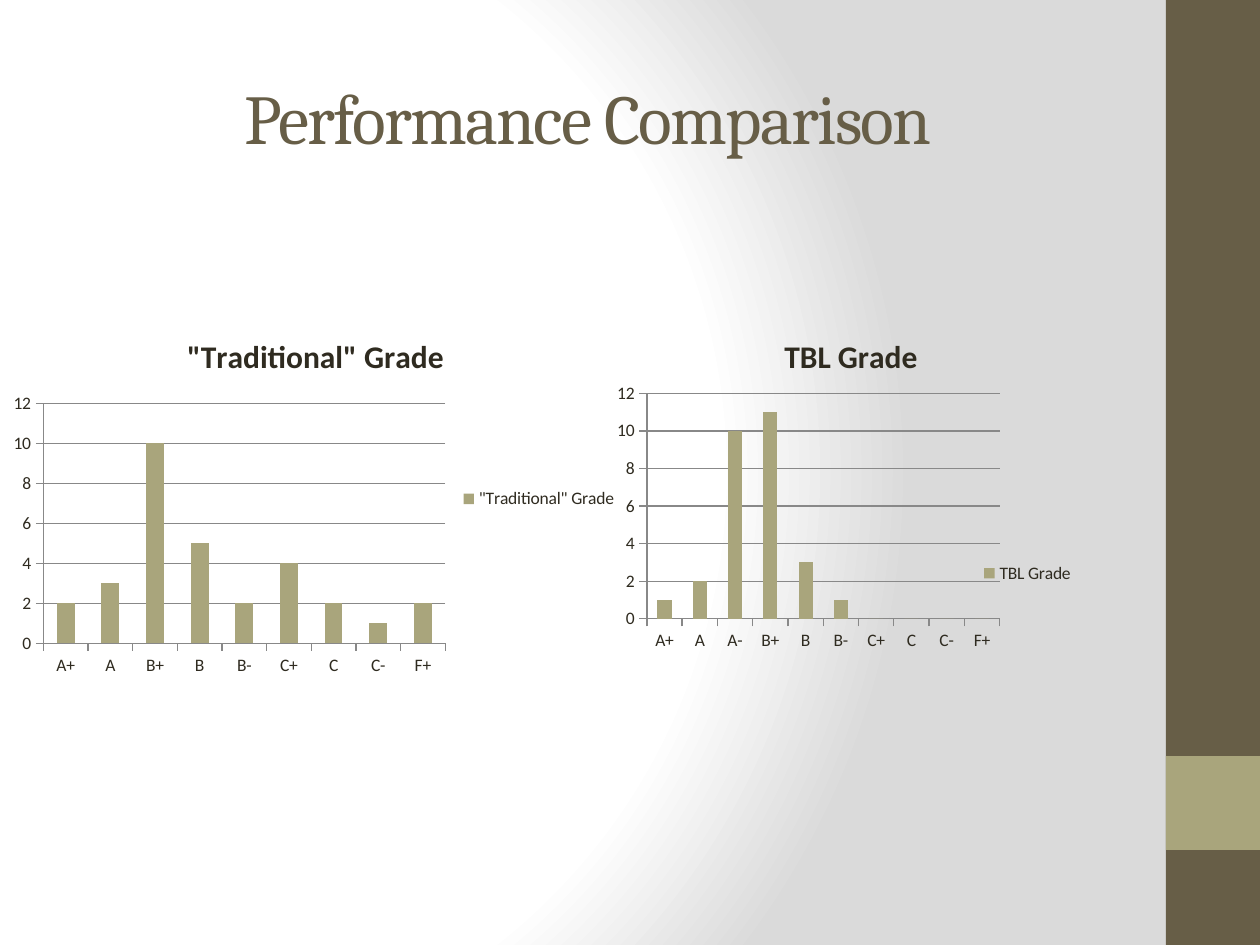
from dataclasses import dataclass
from typing import Any, Optional

from lxml import etree
from pptx import Presentation
from pptx import util as u
from pptx.chart.data import CategoryChartData
from pptx.dml.color import RGBColor
from pptx.enum import chart as charts, shapes, text
from pptx.oxml import parse_xml
from pptx.oxml.ns import nsdecls, qn

SCALE = 914400 / 126
OLIVE, SAGE, INK, GRID = "675E47", "A9A57C", "2F2B20", "888888"
GRADIENT_STOPS = ((0, "FFFFFF"), (75, "FFFFFF"), (100, "DADADA"))


@dataclass
class Box:
    left: int
    top: int
    width: int
    height: int

    def emu(self) -> list[int]:
        return [px(n) for n in (self.left, self.top, self.width, self.height)]


@dataclass
class GradeChart:
    name: str
    box: Box
    grades: list[str]
    counts: list[int]
    plot_layout: Optional[tuple[float, ...]] = None
    legend_layout: Optional[tuple[float, ...]] = None


BANDS = ((Box(1166, 0, 94, 945), OLIVE), (Box(1166, 756, 94, 94), SAGE))
GRADE_CHARTS = (
    GradeChart('"Traditional" Grade', Box(1, 315, 629, 368),
               ["A+", "A", "B+", "B", "B-", "C+", "C", "C-", "F+"],
               [2, 3, 10, 5, 2, 4, 2, 1, 2]),
    GradeChart("TBL Grade", Box(599, 315, 504, 336),
               ["A+", "A", "A-", "B+", "B", "B-", "C+", "C", "C-", "F+"],
               [1, 2, 10, 11, 3, 1, 0, 0, 0, 0],
               plot_layout=(0.095, 0.234, 0.7, 0.672),
               legend_layout=(0.75, 0.72, 0.2, 0.1)),
)


def px(length: int) -> int:
    return round(length * SCALE)


def color(value: str) -> RGBColor:
    return RGBColor.from_string(value)


def set_format(target: Any, **values: Any) -> None:
    for name, value in values.items():
        setattr(target, name, value)


def format_font(font: Any, fill: str, **values: Any) -> None:
    set_format(font, **values)
    font.color.rgb = color(fill)


def paint_background(slide: Any) -> None:
    slide.background.fill.solid()
    solid = slide.element.find(".//" + qn("p:bgPr")).find(qn("a:solidFill"))
    stops = "".join(f'<a:gs pos="{position * 1000}"><a:srgbClr val="{value}"/></a:gs>'
                    for position, value in GRADIENT_STOPS)
    gradient = parse_xml(
        f'<a:gradFill {nsdecls("a")} rotWithShape="1"><a:gsLst>{stops}</a:gsLst>'
        '<a:path path="circle"><a:fillToRect l="20000" t="50000" r="100000" b="50000"/>'
        '</a:path></a:gradFill>')
    solid.getparent().replace(solid, gradient)


def add_band(slide: Any, box: Box, fill: str) -> None:
    shape = slide.shapes.add_shape(shapes.MSO_SHAPE.RECTANGLE, *box.emu())
    shape.shadow.inherit = False
    shape.fill.solid()
    shape.fill.fore_color.rgb = color(fill)
    shape.line.fill.background()


def write_title(slide: Any, title: str, box: Box) -> None:
    shape = slide.shapes.title
    set_format(shape, **dict(zip(("left", "top", "width", "height"), box.emu())))
    frame = shape.text_frame
    set_format(frame, word_wrap=True, vertical_anchor=text.MSO_ANCHOR.MIDDLE)
    paragraph = frame.paragraphs[0]
    paragraph.alignment = text.PP_ALIGN.CENTER
    run = paragraph.add_run()
    run.text = title
    format_font(run.font, OLIVE, name="Cambria", size=u.Pt(40))
    run._r.get_or_add_rPr().set("spc", "-100")


def place_manually(parent: Any, layout: tuple[float, ...], before: str, inner: bool = False) -> None:
    """Give a plot area or legend a fixed place, as fractions of the chart."""
    for old in parent.findall(qn("c:layout")):
        parent.remove(old)
    element = parse_xml(f'<c:layout {nsdecls("c")}><c:manualLayout/></c:layout>')
    manual = element[0]
    settings = [("layoutTarget", "inner")] if inner else []
    settings += [("xMode", "edge"), ("yMode", "edge"), *zip("xywh", layout)]
    for name, value in settings:
        etree.SubElement(manual, qn(f"c:{name}")).set("val", str(value))
    parent.find(qn(before)).addprevious(element)


def format_axis(axis: Any) -> None:
    set_format(axis, major_tick_mark=charts.XL_TICK_MARK.OUTSIDE,
               minor_tick_mark=charts.XL_TICK_MARK.NONE)
    format_line(axis.format.line)


def format_line(line: Any) -> None:
    line.width = u.Pt(0.75)
    line.color.rgb = color(GRID)


def add_grade_chart(slide: Any, item: GradeChart) -> None:
    data = CategoryChartData(number_format="General")
    data.categories = item.grades
    data.add_series(item.name, item.counts)
    chart = slide.shapes.add_chart(
        charts.XL_CHART_TYPE.COLUMN_CLUSTERED, *item.box.emu(), data).chart
    format_font(chart.font, INK, name="Calibri", size=u.Pt(10))

    title = chart.chart_title.text_frame
    title.text = item.name
    format_font(title.paragraphs[0].runs[0].font, INK, name="Calibri", size=u.Pt(18), bold=True)

    plot = chart.plots[0]
    set_format(plot, gap_width=150, vary_by_categories=False)
    fill = plot.series[0].format.fill
    fill.solid()
    fill.fore_color.rgb = color(SAGE)

    for axis in (chart.category_axis, chart.value_axis):
        format_axis(axis)
    set_format(chart.value_axis, minimum_scale=0, maximum_scale=12, major_unit=2)
    format_line(chart.value_axis.major_gridlines.format.line)

    chart.has_legend = True
    set_format(chart.legend, position=charts.XL_LEGEND_POSITION.RIGHT, include_in_layout=False)
    area = chart.element.find(".//" + qn("c:plotArea"))
    if item.plot_layout:
        place_manually(area, item.plot_layout, "c:barChart", inner=True)
    if item.legend_layout:
        place_manually(chart.element.find(".//" + qn("c:legend")), item.legend_layout, "c:overlay")


def main() -> None:
    presentation = Presentation()
    set_format(presentation, slide_width=px(1260), slide_height=px(945))
    slide = presentation.slides.add_slide(presentation.slide_layouts[5])
    paint_background(slide)
    for box, fill in BANDS:
        add_band(slide, box, fill)
    write_title(slide, "Performance Comparison", Box(63, 38, 1050, 158))
    for item in GRADE_CHARTS:
        add_grade_chart(slide, item)
    presentation.save("out.pptx")


if __name__ == "__main__":
    main()
